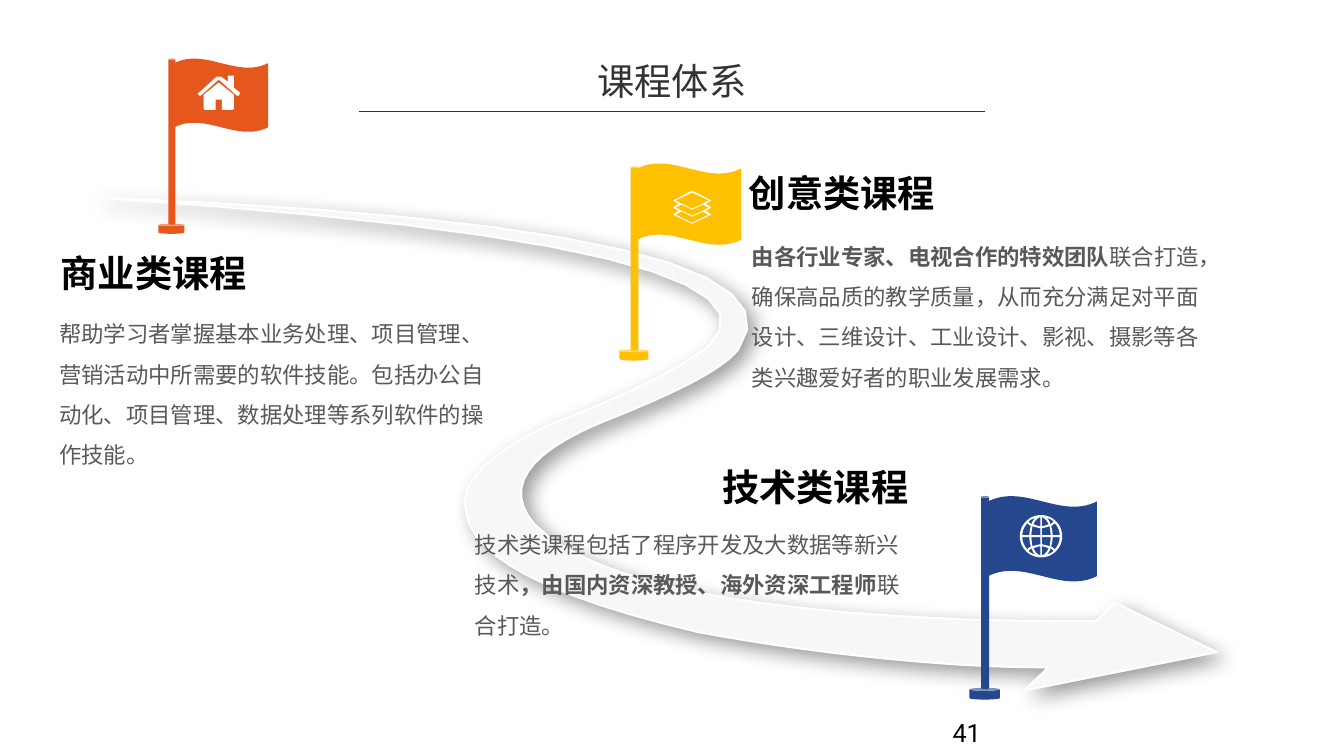
from dataclasses import dataclass
from typing import NamedTuple

from lxml.etree import SubElement
from pptx import Presentation
from pptx.dml.color import RGBColor
from pptx.enum.shapes import MSO_CONNECTOR, MSO_SHAPE
from pptx.enum.text import MSO_ANCHOR, MSO_AUTO_SIZE, PP_ALIGN
from pptx.oxml.ns import qn
from pptx.util import Emu, Pt

COLUMNS, ROWS = 1333, 750
CELL = 9144
CJK_FONT, LATIN_FONT = "Noto Sans CJK SC", "Roboto"
HEADING_SIZE, BODY_SIZE, NUMBER_SIZE = 26.6, 16, 18
CLOTH_WIDTH = 93
COLORS = {
    "orange": "E6571E", "yellow": "FFC000", "blue": "24478D", "white": "FFFFFF",
    "road": "F7F7F7", "title": "333333", "heading": "000000", "body": "595959",
}

Point = tuple[float, float]
Contour = list[Point]


class Area(NamedTuple):
    left: float
    top: float
    width: float
    height: float

    def lengths(self) -> list[Emu]:
        return [Emu(round(cells * CELL)) for cells in self]


class Span(NamedTuple):
    text: str
    bold: bool = False


@dataclass
class TextStyle:
    size: float
    color: str
    font: str = CJK_FONT
    bold: bool = False
    align: PP_ALIGN = PP_ALIGN.LEFT
    spacing: float = 1.0
    anchor: MSO_ANCHOR = MSO_ANCHOR.TOP
    wrap: bool = True


@dataclass
class Flag:
    color: str
    cloth: Area
    pole_drop: float
    icon_center: Point
    icon: list[Contour]


@dataclass
class Course:
    heading: str
    heading_area: Area
    heading_align: PP_ALIGN
    heading_wrap: bool
    spans: list[Span]
    body_area: Area


def mirrored(half: Contour) -> Contour:
    return half + [(-x, y) for x, y in reversed(half) if x]


def globe() -> list[Contour]:
    rim = curve_points((21, 0), [
        (21, 11.6, 11.6, 21, 0, 21), (-11.6, 21, -21, 11.6, -21, 0),
        (-21, -11.6, -11.6, -21, 0, -21), (11.6, -21, 21, -11.6, 21, 0),
    ])
    windows = [
        curve_points((0.75, -19), [(3.5, -18, 6, -15.5, 7.5, -12), (5.5, -11, 3.5, -10.3, 0.75, -10)]),
        curve_points((0.75, -8), [(3.5, -8.5, 6, -9, 8.5, -10), (9, -7, 9.5, -4, 9.5, -1), (0.75, -1)]),
        curve_points((6, -18), [(8.5, -17.5, 11, -16, 12.5, -14.5), (11.5, -13.5, 10.5, -12.7, 9.5, -12),
                                (8.5, -14.5, 7.5, -16.5, 6, -18)]),
        curve_points((18.5, -1), [(11.5, -1), (11.5, -4, 11, -7, 10, -10), (11.5, -11, 12.7, -12, 13.5, -13),
                                  (16.5, -10, 18.5, -5.5, 18.5, -1)]),
    ]
    return [rim] + [[(x * side, y * half) for x, y in window]
                    for side in (1, -1) for half in (1, -1) for window in windows]


def curve_points(start: Point, segments: list[tuple], steps: int = 12) -> Contour:
    points = [start]
    for segment in segments:
        if len(segment) == 2:
            points.append(segment)
            continue
        corners = [points[-1], segment[:2], segment[2:4], segment[4:]]
        for step in range(1, steps + 1):
            t = step / steps
            weights = ((1 - t) ** 3, 3 * t * (1 - t) ** 2, 3 * t * t * (1 - t), t ** 3)
            points.append(tuple(sum(w * corner[axis] for w, corner in zip(weights, corners)) for axis in (0, 1)))
    return points


def rgb(name: str) -> RGBColor:
    return RGBColor.from_string(COLORS[name])


def paint(shape, color: str) -> None:
    shape.shadow.inherit = False
    shape.fill.solid()
    shape.fill.fore_color.rgb = rgb(color)
    shape.line.fill.background()


def draw_outline(shapes, contours: list[Contour], color: str, center: Point = (0, 0)):
    placed = [[((x + center[0]) * CELL, (y + center[1]) * CELL) for x, y in contour] for contour in contours]
    builder = shapes.build_freeform(*placed[0][0], scale=1.0)
    for index, contour in enumerate(placed):
        if index:
            builder.move_to(*contour[0])
        builder.add_line_segments(contour[1:], close=True)
    outline = builder.convert_to_shape()
    paint(outline, color)
    return outline


def draw_road(page) -> None:
    road = draw_outline(page.shapes, [ROAD], "road")
    road.line.color.rgb = rgb("white")
    road.line.width = Pt(1.5)
    effects = road._element.spPr.find(qn("a:effectLst"))
    shadow = SubElement(effects, qn("a:outerShdw"), blurRad=str(Pt(14)), dist=str(Pt(7)),
                        dir="2700000", algn="tl", rotWithShape="0")
    tint = SubElement(shadow, qn("a:srgbClr"), val="000000")
    SubElement(tint, qn("a:alpha"), val="40000")


def draw_flag(page, flag: Flag) -> None:
    shapes = page.shapes.add_group_shape().shapes
    left, top, width, _ = flag.cloth
    scale = width / CLOTH_WIDTH
    pole_top = top + flag.pole_drop
    parts = [
        (MSO_SHAPE.WAVE, flag.cloth),
        (MSO_SHAPE.CAN, Area(left - 16 * scale, pole_top + 164 * scale, 26 * scale, 10 * scale)),
        (MSO_SHAPE.CAN, Area(left - 6 * scale, pole_top, 7 * scale, 165 * scale)),
    ]
    for kind, area in parts:
        part = shapes.add_shape(kind, *area.lengths())
        paint(part, flag.color)
        if kind == MSO_SHAPE.WAVE:
            part.adjustments[0] = 0.064
    draw_outline(shapes, flag.icon, "white", flag.icon_center)


def write_text(box, spans: list[Span], style: TextStyle) -> None:
    frame = box.text_frame
    frame.word_wrap = style.wrap
    frame.auto_size = MSO_AUTO_SIZE.SHAPE_TO_FIT_TEXT
    frame.vertical_anchor = style.anchor
    para = frame.paragraphs[0]
    para.alignment = style.align
    para.line_spacing = style.spacing
    font = para.font
    font.size, font.name, font.bold = Pt(style.size), style.font, style.bold
    font.color.rgb = rgb(style.color)
    SubElement(font._element, qn("a:ea"), typeface=CJK_FONT)
    for span in spans:
        run = para.add_run()
        run.text = span.text
        if span.bold:
            run.font.bold = True


def draw_text(shapes, area: Area, spans: list[Span], style: TextStyle) -> None:
    write_text(shapes.add_textbox(*area.lengths()), spans, style)


def draw_course(page, course: Course) -> None:
    shapes = page.shapes.add_group_shape().shapes
    heading_style = TextStyle(HEADING_SIZE, "heading", bold=True, align=course.heading_align, wrap=course.heading_wrap)
    body_style = TextStyle(BODY_SIZE, "body", LATIN_FONT, spacing=1.5, anchor=MSO_ANCHOR.MIDDLE)
    draw_text(shapes, course.heading_area, [Span(course.heading)], heading_style)
    draw_text(shapes, course.body_area, course.spans, body_style)


def draw_title(page) -> None:
    title = page.shapes.title
    title.left, title.top, title.width, title.height = Area(420, 53, 493, 55).lengths()
    write_text(title, [Span("课程体系")], TextStyle(HEADING_SIZE, "title", align=PP_ALIGN.CENTER))
    ends = [Emu(cells * CELL) for cells in (356, 111, 977, 111)]
    rule = page.shapes.add_connector(MSO_CONNECTOR.STRAIGHT, *ends)
    rule.line.color.rgb = rgb("title")
    rule.line.width = Pt(0.75)
    SubElement(rule._element.spPr, qn("a:effectLst"))


ROAD = curve_points((1087, 616), [
    (1106, 598), (1207, 647), (1016, 685), (1040, 662),
    (1008, 662, 977, 661, 946, 659), (858, 653, 773, 642, 692, 627),
    (543, 592, 466, 552, 462, 506), (456, 478, 484, 450, 546, 421),
    (624, 391, 676, 365, 703, 343), (770, 277, 568, 227, 96, 196),
    (579, 215, 791, 265, 732, 347), (716, 367, 670, 390, 594, 420),
    (521, 451, 500, 485, 530, 520), (583, 574, 722, 605, 946, 614),
    (990, 616, 1037, 616, 1087, 616),
])
HOUSE = [
    [(20, 3), (18, 3), (0, -13), (-18, 3), (-19, 3), (-21, 1), (-2, -16), (2, -16),
     (9, -11), (9, -17), (15, -17), (15, -5), (21, 0)],
    mirrored([(0, -10), (15, 2), (15, 16), (14, 17), (3, 17), (3, 7)]),
]
LAYERS = [
    mirrored([(0, -16.5), (19, -6.5), (13.5, -3.5), (19, 0.5), (13.5, 3.5), (19, 7.5), (0, 16.5)]),
    mirrored([(0, -14.5), (16.5, -6.5), (0, 1.5)]),
] + [mirrored([(0, 2.5 + drop), (10.5, -2.5 + drop), (16.5, 0.5 + drop), (0, 8.5 + drop)]) for drop in (0, 7)]
FLAGS = [
    Flag("orange", Area(173, 58, 93, 73), 0, (217, 92), HOUSE),
    Flag("blue", Area(980, 492, 108, 85), 0, (1032.5, 532), globe()),
    Flag("yellow", Area(632, 162, 103, 81), 3, (686.5, 205.5), LAYERS),
]
COURSES = [
    Course("商业类课程", Area(49, 243, 207, 55), PP_ALIGN.CENTER, False,
           [Span("帮助学习者掌握基本业务处理、项目管理、营销活动中所需要的软件技能。"
                 "包括办公自动化、项目管理、数据处理等系列软件的操作技能。")],
           Area(49, 301, 442, 167)),
    Course("创意类课程", Area(733, 164, 506, 55), PP_ALIGN.LEFT, True,
           [Span("由各行业专家、电视合作的特效团队", True),
            Span("联合打造，确保高品质的教学质量，从而充分满足对平面设计、三维设计、工业设计、"
                 "影视、摄影等各类兴趣爱好者的职业发展需求。")],
           Area(736, 224, 482, 167)),
    Course("技术类课程", Area(462, 456, 449, 55), PP_ALIGN.RIGHT, True,
           [Span("技术类课程包括了程序开发及大数据等新兴技术"),
            Span("，由国内资深教授、海外资深工程师", True), Span("联合打造。")],
           Area(461, 510, 452, 127)),
]


def main() -> None:
    deck = Presentation()
    deck.slide_width, deck.slide_height = Emu(COLUMNS * CELL), Emu(ROWS * CELL)
    page = deck.slides.add_slide(deck.slide_layouts[5])
    draw_text(page.shapes, Area(935, 707, 300, 40), [Span("41")], TextStyle(NUMBER_SIZE, "heading", LATIN_FONT))
    draw_road(page)
    for flag in FLAGS:
        draw_flag(page, flag)
    draw_title(page)
    for course in COURSES:
        draw_course(page, course)
    deck.save("out.pptx")


if __name__ == "__main__":
    main()
